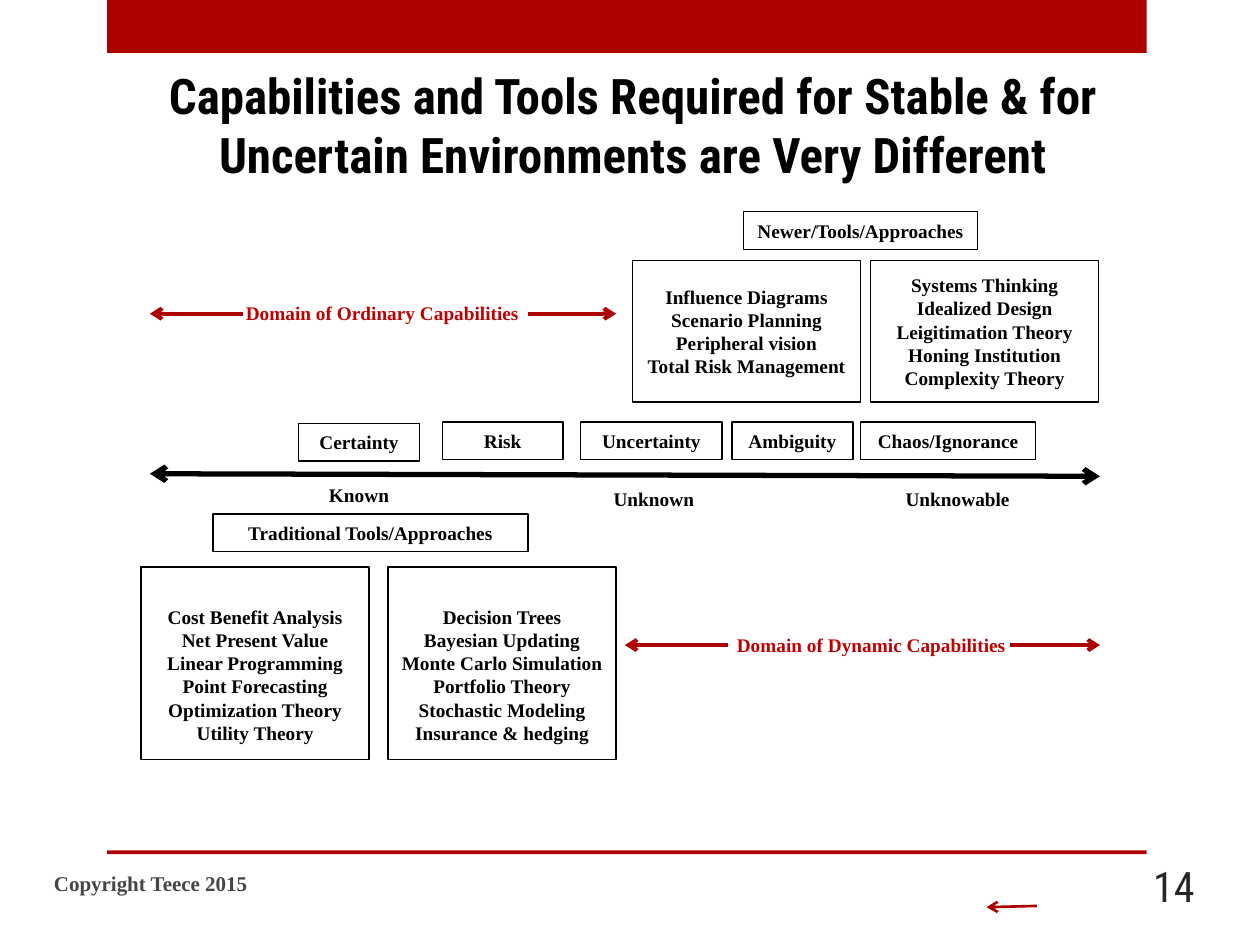
"""Build the slide on capabilities and tools for stable and uncertain environments."""
import lxml.etree
import pptx
import pptx.dml.color
import pptx.enum.shapes
import pptx.enum.text
import pptx.oxml.ns
import pptx.util

RGB = pptx.dml.color.RGBColor
ALIGN = pptx.enum.text.PP_ALIGN
BRAND = RGB(0xAD, 0x01, 0x01)
DOMAIN = RGB(0xC0, 0x00, 0x00)
BLACK = RGB(0x00, 0x00, 0x00)
WHITE = RGB(0xFF, 0xFF, 0xFF)
FOOTER = RGB(0x45, 0x45, 0x45)
NUMBER = RGB(0x26, 0x26, 0x26)
SERIF, SANS = "Times New Roman", "Roboto Condensed"

TITLE = "Capabilities and Tools Required for Stable & for Uncertain Environments are Very Different"
STATES = [("Certainty", 2.37, 3.36, 0.96), ("Risk", 3.51, 3.35, 0.96),
          ("Uncertainty", 4.61, 3.35, 1.12), ("Ambiguity", 5.81, 3.35, 0.96),
          ("Chaos/Ignorance", 6.83, 3.35, 1.39)]
HEADINGS = [("Newer/Tools/Approaches", 5.9, 1.68, 1.86),
            ("Traditional Tools/Approaches", 1.69, 4.08, 2.5)]
KNOWLEDGE = [("Known", 2.37, 3.78, 0.96), ("Unknown", 4.71, 3.81, 0.96),
             ("Unknowable", 7.04, 3.81, 1.12)]
NEWER_TOOLS = [
    (5.02, ["Influence Diagrams", "Scenario Planning", "Peripheral vision",
            "Total Risk Management"]),
    (6.91, ["Systems Thinking", "Idealized Design", "Leigitimation Theory",
            "Honing Institution", "Complexity Theory"]),
]
TRADITIONAL_TOOLS = [
    (1.12, ["Cost Benefit Analysis", "Net Present Value", "Linear Programming",
            "Point Forecasting", "Optimization Theory", "Utility Theory"]),
    (3.08, ["Decision Trees", "Bayesian Updating", "Monte Carlo Simulation",
            "Portfolio Theory", "Stochastic Modeling", "Insurance & hedging"]),
]
DOMAINS = [("Domain of Ordinary Capabilities", 1.62, 2.34, (1.93, 1.19), (4.19, 4.89)),
           ("Domain of Dynamic Capabilities", 5.5, 4.97, (5.78, 4.96), (8.02, 8.73))]
LABEL_H, TOOLS_W, DOMAIN_W, DOMAIN_H = 0.3, 1.81, 2.83, 0.29
BAND_X, BAND_W = 0.85, 8.25

prs = pptx.Presentation()
prs.slide_width, prs.slide_height = pptx.util.Inches(10), pptx.util.Inches(7.5)
s = prs.slides.add_slide(prs.slide_layouts[6])


def add_rect(x, y, w, h, fill, line=None):
    sp = s.shapes.add_shape(pptx.enum.shapes.MSO_SHAPE.RECTANGLE,
                            *map(pptx.util.Inches, (x, y, w, h)))
    sp.shadow.inherit = False
    sp.fill.solid()
    sp.fill.fore_color.rgb = fill
    if line is None:
        sp.line.fill.background()
    else:
        sp.line.color.rgb = line
        sp.line.width = pptx.util.Pt(0.75)
    return sp


def add_text(text, x, y, w, h, boxed=False, size=11, font=SERIF, color=BLACK,
             bold=True, align=ALIGN.CENTER, side=0.1, top=0.05):
    if boxed:
        sp = add_rect(x, y, w, h, WHITE, BLACK)
    else:
        sp = s.shapes.add_textbox(*map(pptx.util.Inches, (x, y, w, h)))
    tf = sp.text_frame
    tf.word_wrap = True
    tf.vertical_anchor = pptx.enum.text.MSO_ANCHOR.MIDDLE
    tf.margin_left = tf.margin_right = pptx.util.Inches(side)
    tf.margin_top = pptx.util.Inches(top)
    tf.text = text
    for p in tf.paragraphs:
        p.alignment = align
        for r in p.runs:
            r.font.size, r.font.name, r.font.bold = pptx.util.Pt(size), font, bold
            r.font.color.rgb = color


def add_arrow(start, end, color=BRAND, width=2.25, ends=("tailEnd",)):
    c = s.shapes.add_connector(pptx.enum.shapes.MSO_CONNECTOR.STRAIGHT,
                               *map(pptx.util.Inches, (*start, *end)))
    c.line.color.rgb = color
    c.line.width = pptx.util.Pt(width)
    ln = c.line._get_or_add_ln()
    for tag in ends:
        lxml.etree.SubElement(ln, pptx.oxml.ns.qn("a:" + tag), type="arrow")
    lxml.etree.SubElement(c._element.spPr, pptx.oxml.ns.qn("a:effectLst"))


add_rect(BAND_X, 0, BAND_W, 0.42, BRAND)
add_rect(BAND_X, 6.75, BAND_W, 0.03, BRAND)
add_text("Copyright Teece 2015", 0.33, 6.81, 5.33, 0.4, size=12, color=FOOTER, align=ALIGN.LEFT)
add_text("14", 8.75, 6.83, 0.83, 0.4, size=24, font=SANS, color=NUMBER, bold=False,
         align=ALIGN.RIGHT)
add_arrow((8.23, 7.19), (7.83, 7.2), width=1.5)
add_text(TITLE, 1.12, 0.52, 7.8, 0.93, size=28, font=SANS)

for label, x, y, w in STATES + HEADINGS:
    add_text(label, x, y, w, LABEL_H, boxed=True, side=0.05)
for tools, y, h, top in ((NEWER_TOOLS, 2.07, 1.12, 0.05), (TRADITIONAL_TOOLS, 4.5, 1.53, 0.23)):
    for x, names in tools:
        add_text("\n".join(names), x, y, TOOLS_W, h, boxed=True, side=0.05, top=top)
for label, x, y, w in KNOWLEDGE:
    add_text(label, x, y, w, LABEL_H)

add_arrow((1.19, 3.76), (8.73, 3.78), color=BLACK, width=3, ends=("headEnd", "tailEnd"))
for label, x, y, *spans in DOMAINS:
    add_text(label, x, y, DOMAIN_W, DOMAIN_H, color=DOMAIN)
    for x1, x2 in spans:
        add_arrow((x1, y + 0.15), (x2, y + 0.15))

prs.save("out.pptx")
